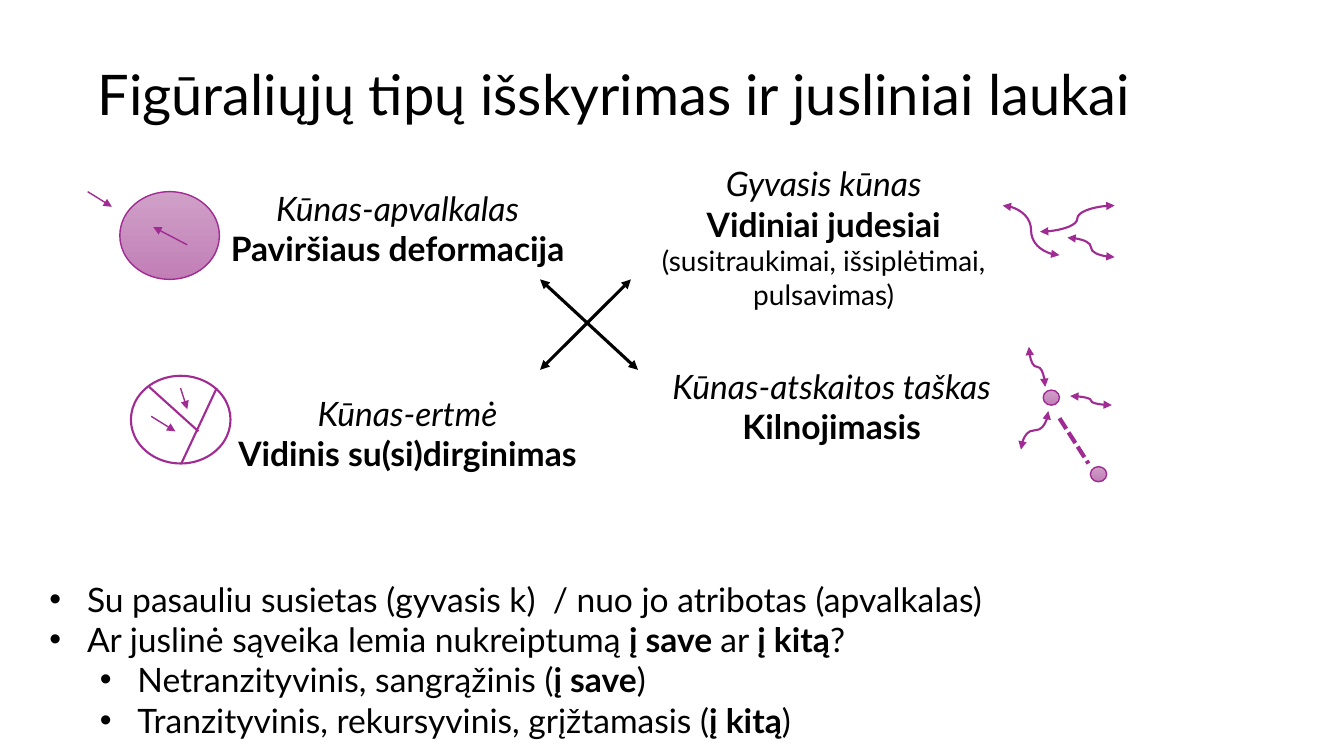
from dataclasses import dataclass

from lxml import etree
from pptx import Presentation
from pptx.dml import color
from pptx.enum import dml, shapes, text
from pptx.oxml import ns
from pptx.util import Cm, Pt


@dataclass(frozen=True)
class Theme:
    font: str = "Lato"
    ink: str = "000000"
    paper: str = "FFFFFF"
    violet: str = "A02B93"
    violet_top: str = "D0A0C8"
    violet_bottom: str = "C17FB6"
    title_size: int = 40
    text_size: int = 24
    detail_size: int = 20


THEME = Theme()


@dataclass(frozen=True)
class Span:
    words: str
    bold: bool = False
    italic: bool = False
    size: int = THEME.text_size


@dataclass(frozen=True)
class Bullet:
    level: int
    spans: list[Span]


@dataclass(frozen=True)
class Label:
    left: float
    top: float
    height: float
    paragraphs: list[list[Span]]


@dataclass(frozen=True)
class Disc:
    left: float
    top: float
    width: float
    height: float
    weight: float = 1
    shaded: bool = True


@dataclass(frozen=True)
class Stroke:
    start: tuple[float, float]
    end: tuple[float, float]
    weight: float = 1
    heads: tuple[str, ...] = ("tailEnd",)
    colour: str = THEME.violet
    dashed: bool = False
    curved: bool = False
    turn: int = 0  # clockwise degrees: 0, 90 or 270


BOTH = ("headEnd", "tailEnd")
LABEL_WIDTH = 9.32

# Content (lengths in centimetres)
TITLE = "Figūraliųjų tipų išskyrimas ir jusliniai laukai"
BULLETS = [
    Bullet(0, [Span("Su pasauliu susietas (gyvasis k)  / nuo jo atribotas (apvalkalas)")]),
    Bullet(0, [Span("Ar juslinė sąveika lemia nukreiptumą "), Span("į save ", bold=True),
               Span("ar "), Span("į kitą", bold=True), Span("?")]),
    Bullet(1, [Span("Netranzityvinis, sangrąžinis ("), Span("į save", bold=True), Span(")")]),
    Bullet(1, [Span("Tranzityvinis, rekursyvinis, grįžtamasis ("),
               Span("į kitą", bold=True), Span(")")]),
]
LABELS = [
    Label(5.36, 4.6, 2.4, [[Span("Kūnas-apvalkalas", italic=True)],
                           [Span("Paviršiaus deformacija", bold=True)]]),
    Label(16.1, 3.99, 3.58, [[Span("Gyvasis kūnas", italic=True)],
                             [Span("Vidiniai judesiai ", bold=True),
                              Span("(susitraukimai, išsiplėtimai, pulsavimas)",
                                   size=THEME.detail_size)]]),
    Label(5.61, 9.78, 2.4, [[Span("Kūnas-ertmė", italic=True)],
                            [Span("Vidinis su(si)dirginimas", bold=True)]]),
    Label(16.3, 9.09, 2.4, [[Span("Kūnas-atskaitos taškas", italic=True)],
                            [Span("Kilnojimasis", bold=True)]]),
]
DISCS = [
    Disc(3.02, 4.83, 2.51, 2.21),
    Disc(3.3, 9.47, 2.51, 2.21, weight=1.5, shaded=False),
    Disc(26.29, 9.83, 0.41, 0.38),
    Disc(27.48, 11.76, 0.41, 0.38),
]
STROKES = [
    # Central cross
    Stroke((15.9, 7.04), (13.61, 9.32), 2.25, BOTH, THEME.ink),
    Stroke((13.61, 7.04), (16.08, 9.32), 2.25, BOTH, THEME.ink),
    # Shell
    Stroke((2.21, 4.83), (2.82, 5.21)),
    Stroke((4.72, 6.17), (3.86, 5.72)),
    # Cavity
    Stroke((3.81, 10.49), (4.42, 10.87)),
    Stroke((5.46, 9.78), (4.57, 11.68), 1.5, ()),
    Stroke((3.76, 9.75), (5.0, 10.87), 1.5, ()),
    Stroke((4.55, 9.78), (4.72, 10.31)),
    # Reference point
    Stroke((26.97, 9.98), (28.02, 10.21), 1.5, BOTH, curved=True),
    Stroke((25.93, 8.74), (26.34, 9.75), 1.5, BOTH, curved=True, turn=270),
    Stroke((25.73, 11.33), (26.42, 10.36), 1.5, BOTH, curved=True, turn=90),
    Stroke((26.7, 10.54), (27.43, 11.68), 3, (), dashed=True),
    # Living body
    Stroke((25.27, 5.18), (26.7, 6.43), 1.5, BOTH, curved=True),
    Stroke((26.21, 5.84), (28.09, 5.18), 1.5, BOTH, curved=True),
    Stroke((26.9, 5.99), (28.09, 6.48), 1.5, BOTH, curved=True),
]


def rgb(value: str) -> color.RGBColor:
    return color.RGBColor.from_string(value)


def place(shape, left: float, top: float, width: float, height: float) -> None:
    shape.left, shape.top = Cm(left), Cm(top)
    shape.width, shape.height = Cm(width), Cm(height)


def style_run(run, span: Span) -> None:
    run.font.name, run.font.size = THEME.font, Pt(span.size)
    run.font.bold, run.font.italic = span.bold, span.italic
    run.font.color.rgb = rgb(THEME.ink)


def write_spans(paragraph, spans: list[Span]) -> None:
    for span in spans:
        run = paragraph.add_run()
        run.text = span.words
        style_run(run, span)


def next_paragraph(frame, index: int):
    return frame.paragraphs[0] if index == 0 else frame.add_paragraph()


def write_title(title) -> None:
    place(title, 2.21, 0.61, 29.21, 3.68)
    frame = title.text_frame
    frame.text = TITLE
    frame.auto_size = text.MSO_AUTO_SIZE.NONE
    frame.vertical_anchor = text.MSO_ANCHOR.MIDDLE
    paragraph = frame.paragraphs[0]
    paragraph.alignment, paragraph.line_spacing = text.PP_ALIGN.LEFT, 0.9
    style_run(paragraph.runs[0], Span(TITLE, size=THEME.title_size))


def write_bullets(body) -> None:
    place(body, 0.99, 14.45, 28.73, 4.37)
    frame = body.text_frame
    frame.auto_size = text.MSO_AUTO_SIZE.NONE
    for index, bullet in enumerate(BULLETS):
        paragraph = next_paragraph(frame, index)
        paragraph.level = bullet.level
        paragraph.line_spacing, paragraph.space_before = 1.0, Pt(0)
        write_spans(paragraph, bullet.spans)
        properties = paragraph._p.get_or_add_pPr()
        properties.set("marL", str(Cm(0.95 + 1.27 * bullet.level)))
        properties.set("indent", str(Cm(-0.95)))
        etree.SubElement(properties, ns.qn("a:buFont"), typeface="Arial")
        etree.SubElement(properties, ns.qn("a:buChar"), char="•")


def draw_label(page, label: Label) -> None:
    box = page.shapes.add_textbox(Cm(label.left), Cm(label.top), Cm(LABEL_WIDTH), Cm(label.height))
    box.text_frame.word_wrap = True
    for index, spans in enumerate(label.paragraphs):
        paragraph = next_paragraph(box.text_frame, index)
        paragraph.alignment = text.PP_ALIGN.CENTER
        write_spans(paragraph, spans)


def draw_disc(page, disc: Disc) -> None:
    shape = page.shapes.add_shape(shapes.MSO_SHAPE.OVAL, Cm(disc.left), Cm(disc.top),
                                  Cm(disc.width), Cm(disc.height))
    shape.shadow.inherit = False
    shape.line.color.rgb, shape.line.width = rgb(THEME.violet), Pt(disc.weight)
    if disc.shaded:
        shape.fill.gradient()
        shape.fill.gradient_angle = 270
        for stop, shade in zip(shape.fill.gradient_stops, (THEME.violet_top, THEME.violet_bottom)):
            stop.color.rgb = rgb(shade)
    else:
        shape.fill.solid()
        shape.fill.fore_color.rgb = rgb(THEME.paper)


def draw_stroke(page, stroke: Stroke) -> None:
    (x1, y1), (x2, y2) = stroke.start, stroke.end
    if stroke.turn:  # undo the turn about the centre before setting it
        middle_x, middle_y = (x1 + x2) / 2, (y1 + y2) / 2
        sign = 1 if stroke.turn == 90 else -1
        reach, rise = sign * (y2 - y1) / 2, sign * (x1 - x2) / 2
        x1, y1, x2, y2 = middle_x - reach, middle_y - rise, middle_x + reach, middle_y + rise
    kind = shapes.MSO_CONNECTOR.CURVE if stroke.curved else shapes.MSO_CONNECTOR.STRAIGHT
    line = page.shapes.add_connector(kind, Cm(x1), Cm(y1), Cm(x2), Cm(y2))
    line.line.color.rgb, line.line.width = rgb(stroke.colour), Pt(stroke.weight)
    if stroke.dashed:
        line.line.dash_style = dml.MSO_LINE.SQUARE_DOT
    properties = line._element.spPr
    if stroke.turn:
        properties.find(ns.qn("a:xfrm")).set("rot", str(stroke.turn * 60000))
    for head in stroke.heads:
        etree.SubElement(properties.find(ns.qn("a:ln")), ns.qn(f"a:{head}"), type="triangle")
    etree.SubElement(properties, ns.qn("a:effectLst"))


def main() -> None:
    deck = Presentation()
    deck.slide_width, deck.slide_height = Cm(33.87), Cm(19.05)
    page = deck.slides.add_slide(deck.slide_layouts[1])
    write_title(page.shapes.title)
    write_bullets(page.placeholders[1])
    for items, draw in ((LABELS, draw_label), (DISCS, draw_disc), (STROKES, draw_stroke)):
        for item in items:
            draw(page, item)
    deck.save("out.pptx")


if __name__ == "__main__":
    main()
